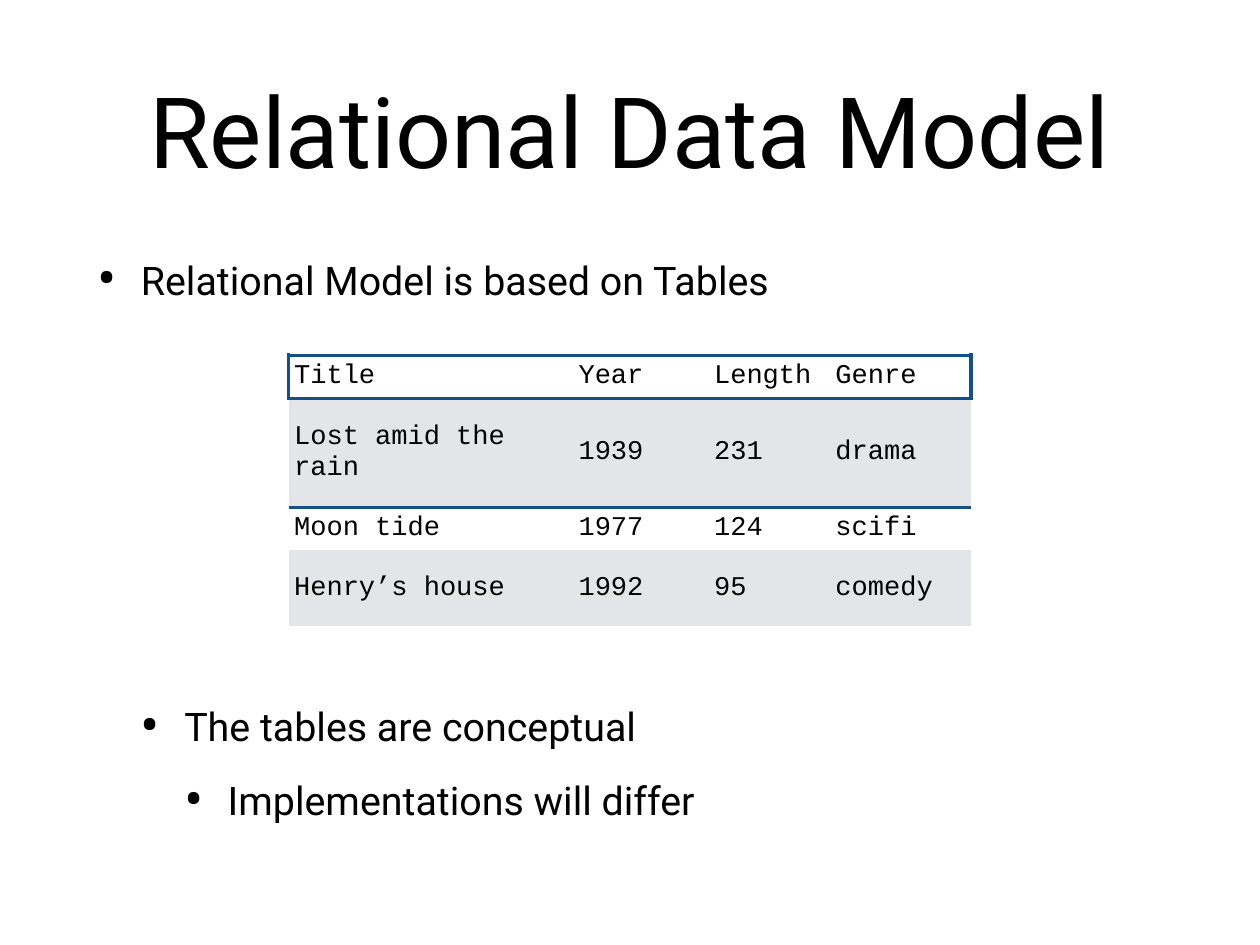
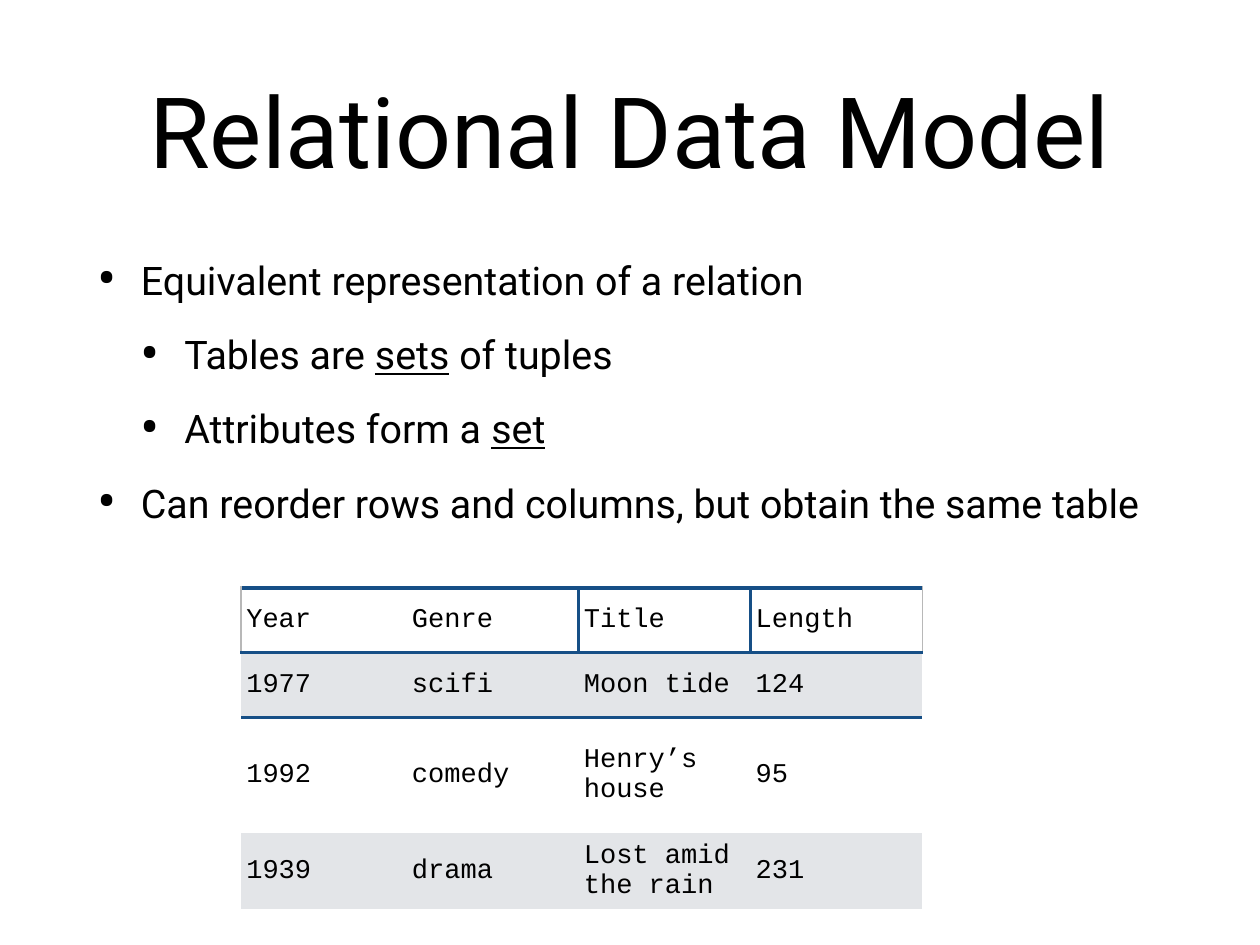
from dataclasses import dataclass
from lxml.etree import SubElement
from pptx import Presentation
from pptx.dml.color import RGBColor
from pptx.enum.text import MSO_ANCHOR, PP_ALIGN
from pptx.oxml.ns import qn
from pptx.util import Inches, Pt


@dataclass(frozen=True)
class Theme:
    ink: str = "000000"
    paper: str = "FFFFFF"
    band: str = "E3E5E8"
    rule: str = "164F86"
    hair: str = "B8B8B8"
    font: str = "Roboto"
    mono: str = "Courier New"
    title: int = 80
    body: int = 32
    cell: int = 22
    gap: int = 22
    inset: float = 0.06
    step: float = 0.49


T = Theme()
RULE = (T.rule, 3)
HAIR = (T.hair, 1)
TITLE = (1.04, 0.28, 12.14, 2.36)
BODY = (1.04, 2.83, 12.14, 6.88)
NOTES = (1.04, 7.87, 12.14, 1.84)


def add_run(para, text, size, font, under=False):
    run = para.add_run()
    run.text = text
    run.font.size = Pt(size)
    run.font.name = font
    run.font.color.rgb = RGBColor.from_string(T.ink)
    if under:
        run.font.underline = True


def pad(item):
    item.margin_left = item.margin_right = Inches(T.inset)
    item.margin_top = item.margin_bottom = Inches(T.inset)


def add_frame(slide, box, anchor):
    frame = slide.shapes.add_textbox(*map(Inches, box)).text_frame
    frame.word_wrap = True
    frame.vertical_anchor = anchor
    pad(frame)
    return frame


def add_title(slide, box, text):
    para = add_frame(slide, box, MSO_ANCHOR.MIDDLE).paragraphs[0]
    para.alignment = PP_ALIGN.CENTER
    add_run(para, text, T.title, T.font)


def set_levels(frame):
    styles = frame._txBody.find(qn("a:lstStyle"))
    for level in range(1, 4):
        style = SubElement(styles, qn(f"a:lvl{level}pPr"))
        font = SubElement(style, qn("a:defRPr"), sz=str(T.body * 100))
        SubElement(font, qn("a:latin"), typeface=T.font)


def set_bullet(para, level):
    para.level = level
    para.space_before = Pt(T.gap)
    props = para._p.get_or_add_pPr()
    props.set("marL", str(Inches(T.step * (level + 1))))
    props.set("indent", str(-Inches(T.step)))
    SubElement(props, qn("a:buSzPct"), val="145000")
    SubElement(props, qn("a:buFont"), typeface=T.font)
    SubElement(props, qn("a:buChar"), char="•")


def add_list(slide, box, items):
    frame = add_frame(slide, box, MSO_ANCHOR.TOP)
    set_levels(frame)
    for i, (level, text) in enumerate(items):
        para = frame.add_paragraph() if i else frame.paragraphs[0]
        set_bullet(para, level)
        for j, part in enumerate(text.split("_")):
            if part:
                add_run(para, part, T.body, T.font, j % 2 == 1)


def set_edge(cell, side, edge):
    props = cell._tc.get_or_add_tcPr()
    if edge is None:
        line = SubElement(props, qn("a:ln" + side), w="0")
        SubElement(line, qn("a:noFill"))
        return
    color, width = edge
    line = SubElement(props, qn("a:ln" + side), w=str(Pt(width)))
    fill = SubElement(line, qn("a:solidFill"))
    SubElement(fill, qn("a:srgbClr"), val=color)


def add_grid(slide, spot, cols, rows, data, heads):
    box = (*spot, sum(cols), sum(rows))
    table = slide.shapes.add_table(
        len(rows), len(cols), *map(Inches, box)).table
    table.first_row = table.horz_banding = False
    for col, width in zip(table.columns, cols):
        col.width = Inches(width)
    for row, height in zip(table.rows, rows):
        row.height = Inches(height)
    bars = [RULE] * 3 + [None] * (len(rows) - 2)
    plain = [None] * len(heads)
    for r in range(len(rows)):
        sides = plain if r else heads
        for c in range(len(cols)):
            cell = table.cell(r, c)
            edges = (sides[c], sides[c + 1], bars[r], bars[r + 1])
            for side, edge in zip("LRTB", edges):
                set_edge(cell, side, edge)
            cell.fill.solid()
            shade = T.band if r % 2 else T.paper
            cell.fill.fore_color.rgb = RGBColor.from_string(shade)
            cell.vertical_anchor = MSO_ANCHOR.MIDDLE
            pad(cell)
            if r < len(data):
                para = cell.text_frame.paragraphs[0]
                add_run(para, data[r][c], T.cell, T.mono)


def add_page(deck):
    slide = deck.slides.add_slide(deck.slide_layouts[6])
    slide.background.fill.solid()
    slide.background.fill.fore_color.rgb = RGBColor.from_string(T.paper)
    add_title(slide, TITLE, "Relational Data Model")
    return slide


def add_model(deck):
    slide = add_page(deck)
    add_list(slide, BODY, [(0, "Relational Model is based on Tables")])
    add_list(slide, NOTES, [
        (1, "The tables are conceptual"),
        (2, "Implementations will differ"),
    ])
    data = [
        ("Title", "Year", "Length", "Genre"),
        ("Lost amid the rain", "1939", "231", "drama"),
        ("Moon tide", "1977", "124", "scifi"),
        ("Henry’s house", "1992", "95", "comedy"),
    ]
    add_grid(slide, (3.26, 4.01), (3.21, 1.53, 1.37, 1.59),
             (0.48, 1.23, 0.48, 0.85, 0.48), data,
             (RULE, None, None, None, RULE))


def add_order(deck):
    slide = add_page(deck)
    add_list(slide, BODY, [
        (0, "Equivalent representation of a relation"),
        (1, "Tables are _sets_ of tuples"),
        (1, "Attributes form a _set_"),
        (0, "Can reorder rows and columns, but obtain the same table"),
    ])
    data = [
        ("Year", "Genre", "Title", "Length"),
        ("1977", "scifi", "Moon tide", "124"),
        ("1992", "comedy", "Henry’s house", "95"),
        ("1939", "drama", "Lost amid the rain", "231"),
    ]
    add_grid(slide, (2.72, 6.64), (1.87, 1.94, 1.94, 1.94),
             (0.73, 0.73, 1.31, 0.73), data,
             (HAIR, None, RULE, RULE, HAIR))


def main():
    deck = Presentation()
    deck.slide_width = Inches(14.22)
    deck.slide_height = Inches(10.67)
    add_model(deck)
    add_order(deck)
    deck.save("out.pptx")


if __name__ == "__main__":
    main()
